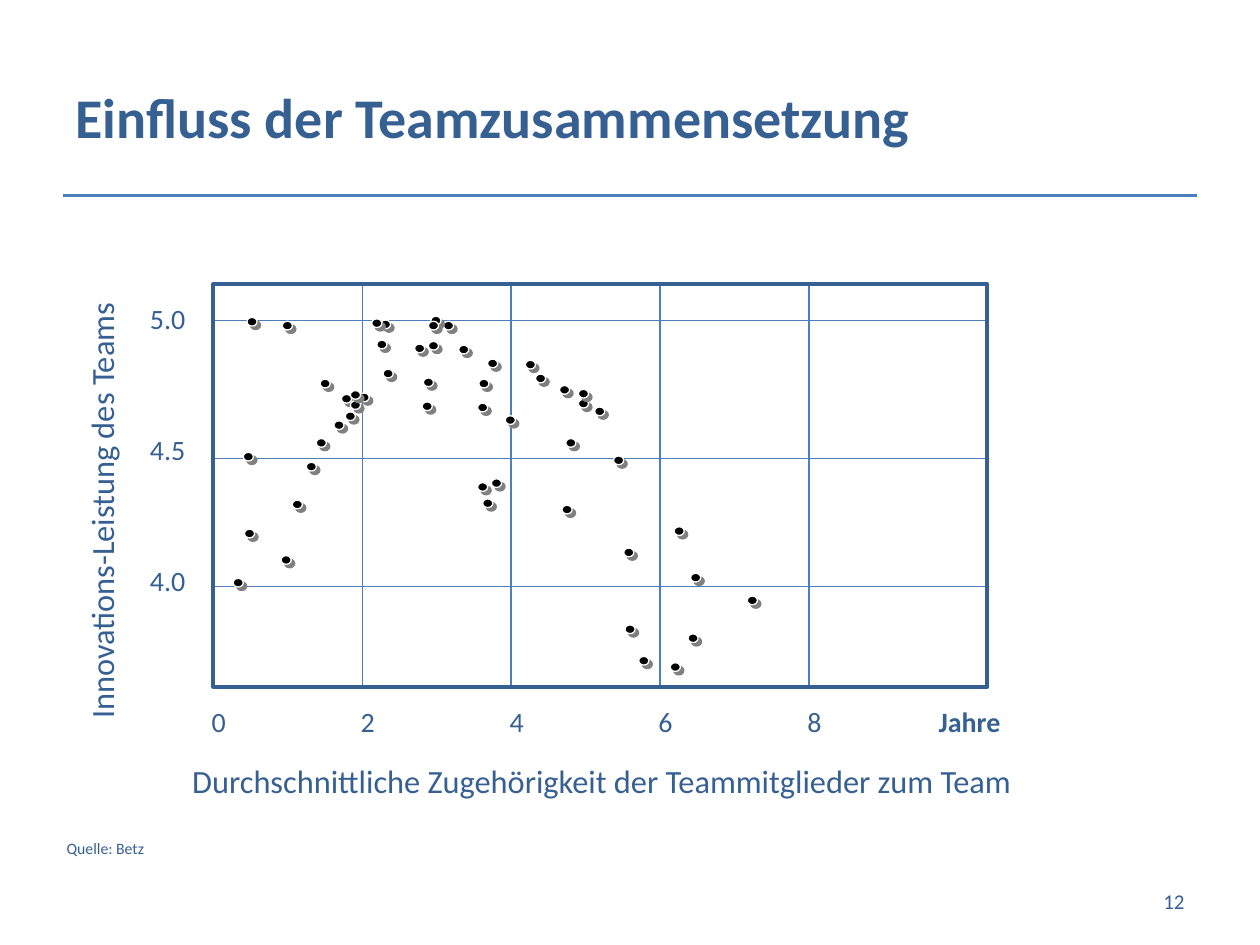
"""Build a slide with a scatter diagram of team tenure and innovation performance."""
from lxml import etree
from pptx import Presentation
from pptx import util as u
from pptx.dml.color import RGBColor
from pptx.enum import shapes, text
from pptx.oxml import ns

NAVY = RGBColor(0x37, 0x60, 0x92)
BLUE = RGBColor(0x4B, 0x7E, 0xBC)
BLACK = RGBColor(0, 0, 0)
WHITE = RGBColor(0xFF, 0xFF, 0xFF)
FONT = "Calibri"
LEFT, TOP, WIDTH, HEIGHT = 121.9, 162.3, 442.3, 230.2
YEAR_STEP = 85.1
SCORE_LINES = (183.1, 261.9, 335)
SCORE_LABEL_TOP, SCORE_LABEL_STEP = 171.4, 74.9
DOT_WIDTH, DOT_HEIGHT = 5.8, 5
DOTS = (
    (195.1, 225.4), (200.2, 229), (197.3, 235.4), (139.7, 302.4),
    (300.2, 205.9), (288.7, 237.6), (273.6, 216.7), (205.2, 224.6),
    (200.2, 223.2), (180.7, 250.6), (139, 258.5), (272.9, 230.4),
    (280.8, 273.6), (393.1, 362.2), (323.3, 250.6), (215.3, 194.4),
    (244.8, 195.1), (190.8, 240.5), (167, 285.8), (306, 213.8),
    (319.7, 220.3), (365, 375.1), (278.6, 205.2), (321.1, 288.7),
    (253.4, 183.6), (236.9, 196.6), (262.1, 197.3), (175, 264.2),
    (241.2, 229.7), (339.8, 232.6), (350.6, 260.6), (383, 378.7),
    (182.9, 216.7), (161.3, 183.6), (246.2, 180.7), (244.8, 183.6),
    (241.9, 216), (160.6, 317.5), (272.9, 275.8), (330.5, 228.2),
    (357.1, 357.1), (394.6, 327.6), (141.1, 181.4), (217.4, 182.9),
    (212.4, 182.2), (218.9, 211), (133.2, 330.5), (275.8, 285.1),
    (330.5, 222.5), (356.4, 313.2), (385.2, 301), (427, 340.6),
)


def points(*lengths):
    """Convert plain numbers to lengths in points."""
    return [u.Pt(length) for length in lengths]


def style_text(box, size, align, bold=False):
    """Format the only paragraph of a shape."""
    para = box.text_frame.paragraphs[0]
    para.alignment = align
    for span in para.runs:
        span.font.name = FONT
        span.font.size = u.Pt(size)
        span.font.bold = bold
        span.font.color.rgb = NAVY


def add_title(page, wording):
    """Fill and place the title placeholder."""
    title = page.shapes.title
    title.left, title.top, title.width, title.height = points(36, 21.6, 648, 90)
    title.text_frame.text = wording
    title.text_frame.auto_size = text.MSO_AUTO_SIZE.NONE
    title.text_frame.vertical_anchor = text.MSO_ANCHOR.MIDDLE
    style_text(title, 32, text.PP_ALIGN.LEFT, bold=True)


def add_line(page, start, end, weight):
    """Draw a straight blue line without shadow."""
    line = page.shapes.add_connector(
        shapes.MSO_CONNECTOR.STRAIGHT, *points(*start, *end))
    line.line.color.rgb = BLUE
    line.line.width = u.Pt(weight)
    etree.SubElement(line._element.spPr, ns.qn("a:effectLst"))


def add_text(page, wording, place, size, align=text.PP_ALIGN.LEFT, wrap=True):
    """Add a one-paragraph text box."""
    box = page.shapes.add_textbox(*points(*place))
    box.text_frame.text = wording
    box.text_frame.word_wrap = wrap
    style_text(box, size, align)
    return box


def add_label(page, wording, place, size=16, align=text.PP_ALIGN.LEFT):
    """Add an unwrapped diagram label with tight lines."""
    box = add_text(page, wording, place, size, align, wrap=False)
    frame = box.text_frame
    frame.auto_size = text.MSO_AUTO_SIZE.SHAPE_TO_FIT_TEXT
    frame.margin_left = frame.margin_right = u.Pt(6.5)
    frame.margin_top = frame.margin_bottom = u.Pt(3.2)
    frame.paragraphs[0].line_spacing = 0.9
    return box


def add_dot(page, left, top):
    """Draw one data point with a grey shadow."""
    dot = page.shapes.add_shape(
        shapes.MSO_SHAPE.OVAL, *points(left, top, DOT_WIDTH, DOT_HEIGHT))
    dot.fill.solid()
    dot.fill.fore_color.rgb = BLACK
    dot.line.color.rgb = WHITE
    dot.line.width = u.Pt(0.75)
    dot.shadow.inherit = False
    effects = dot._element.spPr.find(ns.qn("a:effectLst"))
    shadow = etree.SubElement(
        effects, ns.qn("a:outerShdw"), dist=str(u.Pt(2.8)),
        dir="2700000", algn="ctr", rotWithShape="0")
    etree.SubElement(shadow, ns.qn("a:srgbClr"), val="808080")


def add_grid(page):
    """Draw the grid lines for years and scores."""
    for number in range(1, 5):
        x = LEFT + number * YEAR_STEP
        add_line(page, (x, TOP + HEIGHT), (x, TOP), 0.75)
    for y in SCORE_LINES:
        add_line(page, (LEFT, y), (LEFT + WIDTH, y), 0.75)


def add_axis_labels(page):
    """Write the axis titles and the scale labels."""
    center = text.PP_ALIGN.CENTER
    add_label(page, "Durchschnittliche Zugehörigkeit der Teammitglieder zum Team",
              (101.5, 434.2, 484.6, 26.6), 18.5, center)
    score_title = add_label(page, "Innovations-Leistung des Teams",
                            (-67, 278.6, 252.7, 26.6), 18.5, center)
    score_title.rotation = 270
    for number, score in enumerate(("5.0", "4.5", "4.0")):
        top = SCORE_LABEL_TOP + number * SCORE_LABEL_STEP
        add_label(page, score, (79.2, top, 35, 23.8))
    for number in range(5):
        left = LEFT - 7.4 + number * YEAR_STEP
        add_label(page, str(2 * number), (left, 401.8, 21.5, 23.8))
    unit = add_label(page, "Jahre", (528.5, 401.8, 51, 23.8), align=center)
    unit.text_frame.paragraphs[0].runs[0].font.bold = True


def add_frame(page):
    """Draw the outline of the plot area."""
    frame = page.shapes.add_shape(
        shapes.MSO_SHAPE.RECTANGLE, *points(LEFT, TOP, WIDTH, HEIGHT))
    frame.fill.background()
    frame.line.color.rgb = NAVY
    frame.line.width = u.Pt(2.25)
    frame.shadow.inherit = False


def main():
    """Build and save the deck."""
    deck = Presentation()
    deck.slide_width, deck.slide_height = points(720, 540)
    page = deck.slides.add_slide(deck.slide_layouts[5])
    add_title(page, "Einfluss der Teamzusammensetzung")
    add_line(page, (36, 111.6), (684, 111.6), 1.5)
    add_grid(page)
    add_axis_labels(page)
    for left, top in DOTS:
        add_dot(page, left, top)
    add_frame(page)
    add_text(page, "Quelle: Betz", (31, 475.9, 264.2, 18), 9)
    number = add_text(page, "12", (516.2, 500.4, 167.8, 28.8), 12,
                      text.PP_ALIGN.RIGHT)
    number.text_frame.vertical_anchor = text.MSO_ANCHOR.MIDDLE
    deck.save("out.pptx")


if __name__ == "__main__":
    main()
